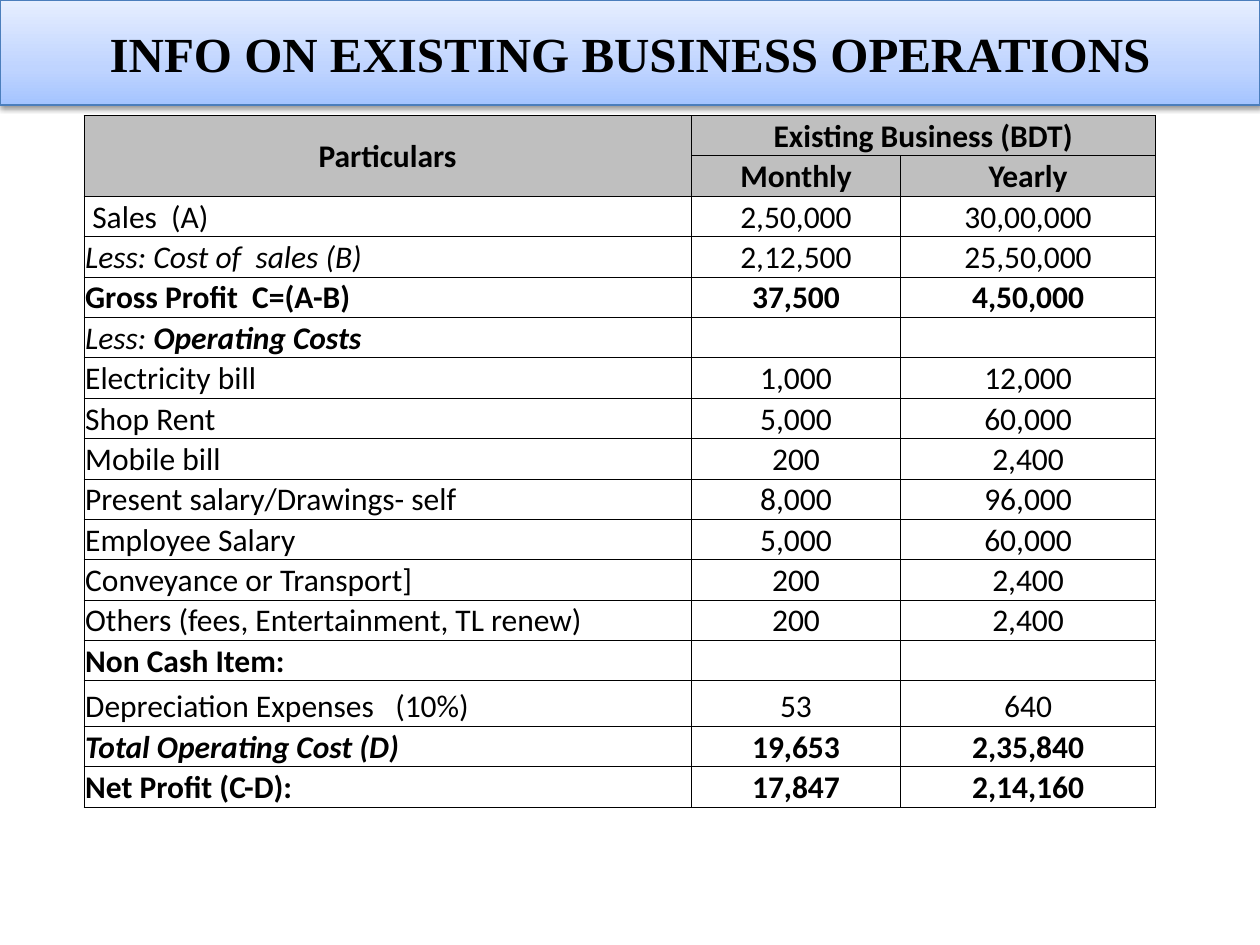
from dataclasses import dataclass

from lxml import etree
from pptx import Presentation
from pptx.dml.color import RGBColor
from pptx.enum.shapes import MSO_SHAPE
from pptx.enum.text import MSO_ANCHOR, PP_ALIGN
from pptx.oxml.ns import qn
from pptx.util import Pt

RECTANGLE = MSO_SHAPE.RECTANGLE
MIDDLE, BOTTOM = MSO_ANCHOR.MIDDLE, MSO_ANCHOR.BOTTOM
LEFT, CENTER = PP_ALIGN.LEFT, PP_ALIGN.CENTER


@dataclass(frozen=True)
class Theme:
    ink: str = "000000"
    paper: str = "FFFFFF"
    header: str = "BFBFBF"
    banner_line: str = "4B7EBC"
    banner_stops: tuple = ((0, "A4C4FF"), (35, "BFD4FF"), (100, "E6EEFF"))
    title_font: str = "Times New Roman"
    body_font: str = "Calibri"
    title_size: int = 28
    body_size: int = 18


THEME = Theme()
PLAIN, BOLD = {}, {"bold": True}
ITALIC, BOLD_ITALIC = {"italic": True}, {"bold": True, "italic": True}
COLUMN_WIDTHS = (347, 119.8, 145.5)
ROW_HEIGHT, TALL_ROW_HEIGHT = 23.1, 26
TALL_ROW = 14
HEADER_ROWS = (
    ("Particulars", "Existing Business (BDT)", ""),
    ("", "Monthly", " Yearly "),
)
BODY_ROWS = (
    ([(" Sales  (A)", PLAIN)], "2,50,000", "30,00,000", PLAIN),
    ([("Less: Cost of  sales (B)", ITALIC)], "2,12,500", "25,50,000", PLAIN),
    ([("Gross Profit  C=(A-B)", BOLD)], "37,500", "4,50,000", BOLD),
    ([("Less: ", ITALIC), ("Operating Costs", BOLD_ITALIC)], "", "", PLAIN),
    ([("Electricity bill", PLAIN)], "1,000", "12,000", PLAIN),
    ([("Shop Rent", PLAIN)], "5,000", "60,000", PLAIN),
    ([("Mobile bill", PLAIN)], "200", "2,400", PLAIN),
    ([("Present salary/Drawings- self", PLAIN)], "8,000", "96,000", PLAIN),
    ([("Employee Salary", PLAIN)], "5,000", "60,000", PLAIN),
    ([("Conveyance or Transport]", PLAIN)], "200", "2,400", PLAIN),
    ([("Others (fees, Entertainment, TL renew)", PLAIN)], "200", "2,400", PLAIN),
    ([("Non Cash Item:", BOLD)], "", "", PLAIN),
    ([("Depreciation Expenses   (10%)", PLAIN)], "53", "640", PLAIN),
    ([("Total Operating Cost (D)", BOLD_ITALIC)], "19,653", "2,35,840", BOLD),
    ([("Net Profit (C-D):", BOLD)], "17,847", "2,14,160", BOLD),
)


def set_attributes(target, values):
    for name, value in values.items():
        setattr(target, name, value)


def add_color(parent, color):
    return etree.SubElement(parent, qn("a:srgbClr"), val=color)


def write_spans(para, spans, align, font, size):
    para.alignment = align
    for text, style in spans:
        if text:
            span = para.add_run()
            span.text = text
            base = {"name": font, "size": Pt(size), "bold": False, "italic": False}
            set_attributes(span.font, base | style)
            span.font.color.rgb = RGBColor.from_string(THEME.ink)


def add_banner(page, box, text):
    banner = page.shapes.add_shape(RECTANGLE, *map(Pt, box))
    banner.fill.gradient()
    banner.fill.gradient_angle = 90
    properties = banner._element.spPr
    stops = properties.find(".//" + qn("a:gsLst"))
    stops[:] = []
    for position, color in THEME.banner_stops:
        stop = etree.SubElement(stops, qn("a:gs"), pos=str(position * 1000))
        add_color(stop, color)
    banner.line.color.rgb = RGBColor.from_string(THEME.banner_line)
    banner.line.width = Pt(0.75)

    banner.shadow.inherit = False
    shadow = etree.SubElement(
        properties.find(qn("a:effectLst")), qn("a:outerShdw"),
        blurRad=str(Pt(3.1)), dist=str(Pt(1.6)), dir="5400000", rotWithShape="0",
    )
    etree.SubElement(add_color(shadow, THEME.ink), qn("a:alpha"), val="38000")

    frame = banner.text_frame
    set_attributes(frame, {"word_wrap": True, "vertical_anchor": MIDDLE})
    write_spans(frame.paragraphs[0], [(text, BOLD)], CENTER,
                THEME.title_font, THEME.title_size)


def fill_cell(cell, spans, align, anchor, fill):
    set_attributes(cell, {
        "margin_left": Pt(0.7), "margin_right": Pt(0.7), "margin_top": Pt(0.7),
        "margin_bottom": 0, "vertical_anchor": anchor,
    })
    properties = cell._tc.get_or_add_tcPr()
    for side in ("a:lnL", "a:lnR", "a:lnT", "a:lnB"):
        line = etree.SubElement(properties, qn(side), w=str(Pt(0.5)))
        add_color(etree.SubElement(line, qn("a:solidFill")), THEME.ink)
    if fill:
        cell.fill.solid()
        cell.fill.fore_color.rgb = RGBColor.from_string(fill)
    else:
        cell.fill.background()
    write_spans(cell.text_frame.paragraphs[0], spans, align,
                THEME.body_font, THEME.body_size)


def add_operations_table(page, box):
    row_count = len(HEADER_ROWS) + len(BODY_ROWS)
    table = page.shapes.add_table(row_count, len(COLUMN_WIDTHS), *map(Pt, box)).table
    set_attributes(table, {"first_row": False, "horz_banding": False})
    for column, width in zip(table.columns, COLUMN_WIDTHS):
        column.width = Pt(width)
    for index, row in enumerate(table.rows):
        row.height = Pt(TALL_ROW_HEIGHT if index == TALL_ROW else ROW_HEIGHT)

    for row, texts in enumerate(HEADER_ROWS):
        for column, text in enumerate(texts):
            fill_cell(table.cell(row, column), [(text, BOLD)], CENTER, MIDDLE,
                      THEME.header)
    table.cell(0, 0).merge(table.cell(1, 0))
    table.cell(0, 1).merge(table.cell(0, 2))

    for row, (label, *amounts, style) in enumerate(BODY_ROWS, len(HEADER_ROWS)):
        fill = None if row == row_count - 1 else THEME.paper
        fill_cell(table.cell(row, 0), label, LEFT, BOTTOM, fill)
        for column, amount in enumerate(amounts, 1):
            fill_cell(table.cell(row, column), [(amount, style)], CENTER, BOTTOM, fill)


def main():
    deck = Presentation()
    set_attributes(deck, {"slide_width": Pt(720), "slide_height": Pt(540)})
    page = deck.slides.add_slide(deck.slide_layouts[6])
    add_banner(page, (0, 0, 720, 60), "INFO ON EXISTING BUSINESS OPERATIONS")
    add_operations_table(page, (48, 66, 612, 396))
    deck.save("out.pptx")


if __name__ == "__main__":
    main()
